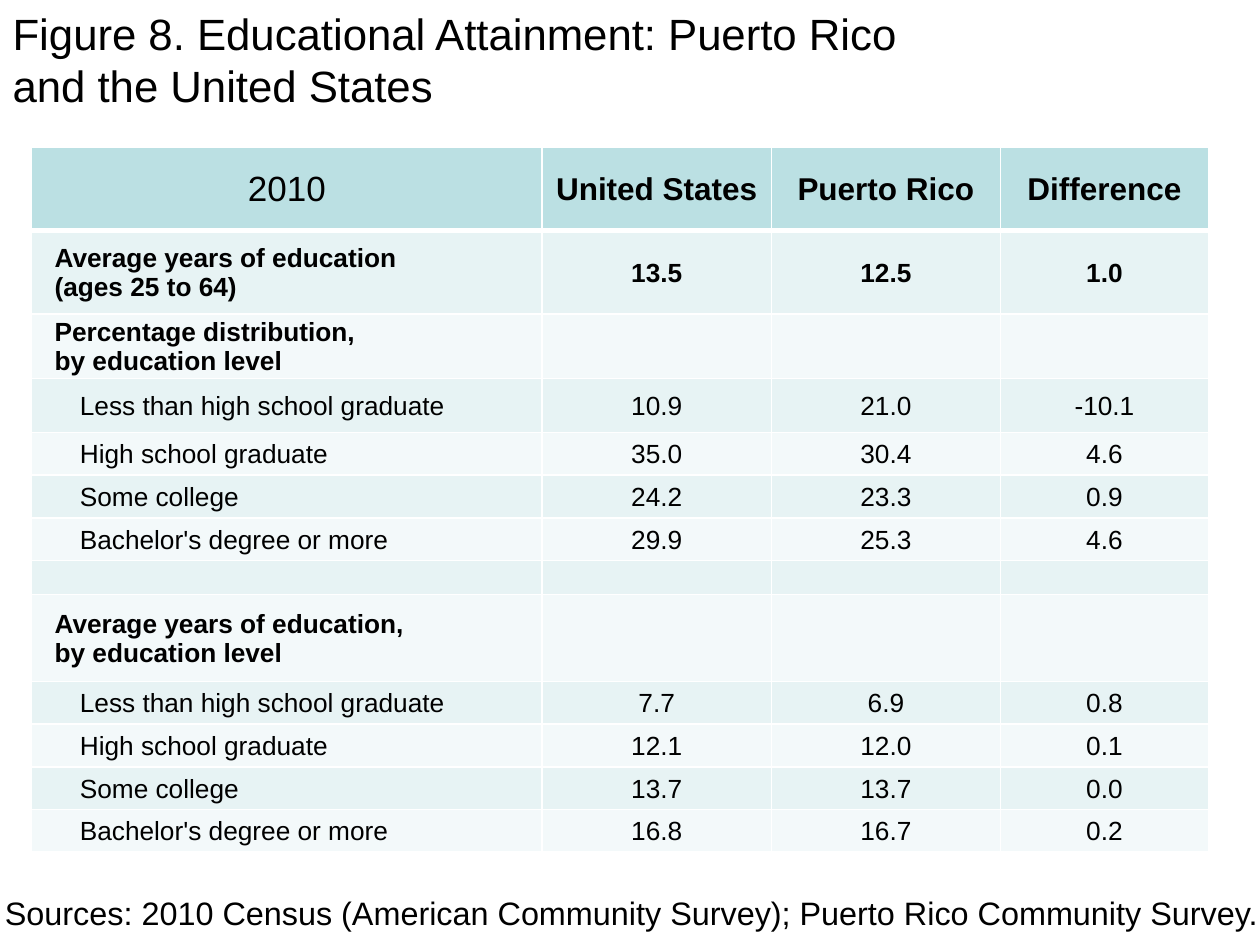
"""Build a slide comparing educational attainment in Puerto Rico and the United States."""
from dataclasses import dataclass

from lxml import etree
from pptx import Presentation
from pptx.dml.color import RGBColor
from pptx.enum.text import MSO_ANCHOR, PP_ALIGN
from pptx.oxml.ns import qn
from pptx.util import Cm, Pt

LEFT, CENTER = PP_ALIGN.LEFT, PP_ALIGN.CENTER
TOP, MIDDLE = MSO_ANCHOR.TOP, MSO_ANCHOR.MIDDLE
FONT = "Arial"
BLACK, WHITE = "000000", "FFFFFF"
HEADER_FILL, BAND_FILLS = "BBE0E3", ("E7F3F4", "F3F9FA")
COLUMN_WIDTHS = (10.29, 4.62, 4.62, 4.19)
HEADING_INDENT, LEVEL_INDENT, SMALL_INSET = 0.46, 0.97, 0.03


@dataclass(frozen=True)
class TableRow:
    """One row of the table, with its height in centimetres."""
    label: str
    values: tuple[str, ...] = ("", "", "")
    height: float = 0.86
    bold: bool = False
    size: float = 15


HEADER = TableRow("2010", ("United States", "Puerto Rico", "Difference"), 1.68, True, 18)
ROWS = (
    HEADER,
    TableRow("Average years of education\n(ages 25 to 64)", ("13.5", "12.5", "1.0"), 1.68, True),
    TableRow("Percentage distribution,\nby education level", height=1.3, bold=True),
    TableRow("Less than high school graduate", ("10.9", "21.0", "-10.1"), 1.09),
    TableRow("High school graduate", ("35.0", "30.4", "4.6")),
    TableRow("Some college", ("24.2", "23.3", "0.9")),
    TableRow("Bachelor's degree or more", ("29.9", "25.3", "4.6")),
    TableRow("", height=0.69),
    TableRow("Average years of education,\nby education level", height=1.75, bold=True),
    TableRow("Less than high school graduate", ("7.7", "6.9", "0.8")),
    TableRow("High school graduate", ("12.1", "12.0", "0.1")),
    TableRow("Some college", ("13.7", "13.7", "0.0")),
    TableRow("Bachelor's degree or more", ("16.8", "16.7", "0.2")),
)


def color(value: str) -> RGBColor:
    """Turn a hex string into a colour."""
    return RGBColor.from_string(value)


def write_text(text_frame, text: str, size: float, bold: bool = False, alignment=LEFT) -> None:
    """Write one formatted paragraph for each line of text."""
    text_frame.text = text
    for paragraph in text_frame.paragraphs:
        paragraph.alignment = alignment
        for run in paragraph.runs:
            for name, value in {"name": FONT, "size": Pt(size), "bold": bold}.items():
                setattr(run.font, name, value)
            run.font.color.rgb = color(BLACK)
        if not paragraph.runs:
            etree.SubElement(paragraph._p, qn("a:endParaRPr"), sz=str(int(size * 100)))


def add_borders(cell, bottom_width: float) -> None:
    """Give a cell white borders of one point, with its own bottom width."""
    properties = cell._tc.get_or_add_tcPr()
    for side, width in {"lnL": 1, "lnR": 1, "lnT": 1, "lnB": bottom_width}.items():
        line = etree.SubElement(properties, qn(f"a:{side}"), w=str(Pt(width)))
        line_fill = etree.SubElement(line, qn("a:solidFill"))
        etree.SubElement(line_fill, qn("a:srgbClr"), val=WHITE)


def fill_cell(cell, row: TableRow, column: int, fill: str) -> None:
    """Write and format one cell of the table."""
    is_header, is_label = row is HEADER, column == 0
    indent = SMALL_INSET
    if is_label and not is_header:
        indent = HEADING_INDENT if row.bold else LEVEL_INDENT
    cell_format = {
        "margin_left": Cm(indent),
        "margin_right": Cm(SMALL_INSET),
        "margin_top": Cm(SMALL_INSET),
        "margin_bottom": Cm(0),
        "vertical_anchor": MIDDLE,
    }
    for name, value in cell_format.items():
        setattr(cell, name, value)
    size, bold = (20, False) if is_header and is_label else (row.size, row.bold)
    alignment = LEFT if is_label and not is_header else CENTER
    write_text(cell.text_frame, (row.label, *row.values)[column], size, bold, alignment)
    add_borders(cell, 3 if is_header else 1)
    cell.fill.solid()
    cell.fill.fore_color.rgb = color(fill)


def add_attainment_table(slide) -> None:
    """Add the table of years and percentages."""
    total_height = sum(row.height for row in ROWS)
    table = slide.shapes.add_table(
        len(ROWS), len(COLUMN_WIDTHS), Cm(0.64), Cm(2.97),
        Cm(sum(COLUMN_WIDTHS)), Cm(total_height)).table
    for column, width in zip(table.columns, COLUMN_WIDTHS):
        column.width = Cm(width)
    for row_index, row in enumerate(ROWS):
        table.rows[row_index].height = Cm(row.height)
        fill = HEADER_FILL if row is HEADER else BAND_FILLS[(row_index - 1) % 2]
        for column_index in range(len(COLUMN_WIDTHS)):
            fill_cell(table.cell(row_index, column_index), row, column_index, fill)


def add_title(slide) -> None:
    """Place the title at the top of the slide."""
    title = slide.shapes.title
    position = {"left": Cm(0), "top": Cm(0), "width": Cm(25.83), "height": Cm(2.39)}
    for name, value in position.items():
        setattr(title, name, value)
    title.text_frame.vertical_anchor = TOP
    title.text_frame.word_wrap = True
    write_text(title.text_frame,
               "Figure 8. Educational Attainment: Puerto Rico\nand the United States", 25)
    for paragraph in title.text_frame.paragraphs:
        paragraph.space_before = Pt(0)


def add_sources(slide) -> None:
    """Add the line of sources below the table."""
    box = slide.shapes.add_textbox(Cm(-0.15), Cm(17.88), Cm(26.67), Cm(1.04))
    box.text_frame.word_wrap = True
    write_text(box.text_frame, "Sources: 2010 Census (American Community Survey); "
               "Puerto Rico Community Survey.", 18.5)


def main() -> None:
    """Build and save the presentation."""
    presentation = Presentation()
    presentation.slide_width, presentation.slide_height = Cm(25.4), Cm(19.05)
    slide = presentation.slides.add_slide(presentation.slide_layouts[5])
    add_title(slide)
    add_attainment_table(slide)
    add_sources(slide)
    presentation.save("out.pptx")


if __name__ == "__main__":
    main()
